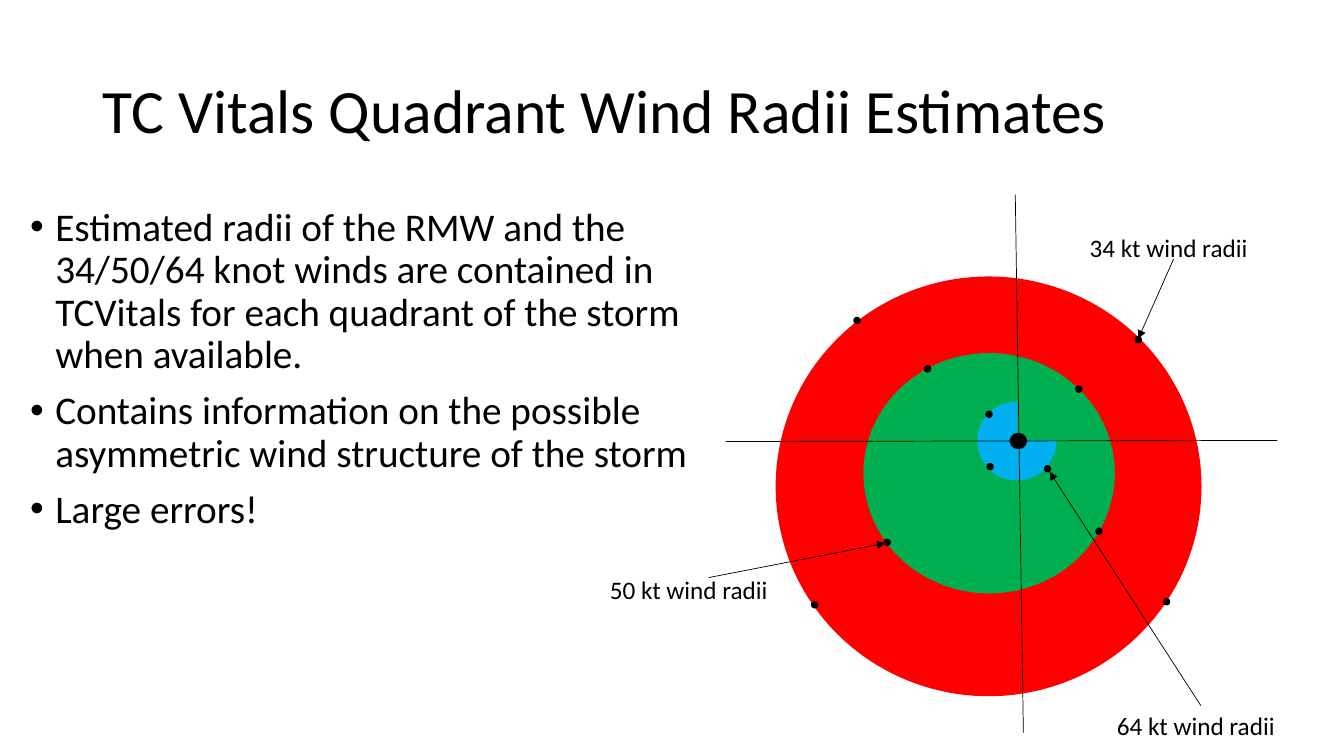
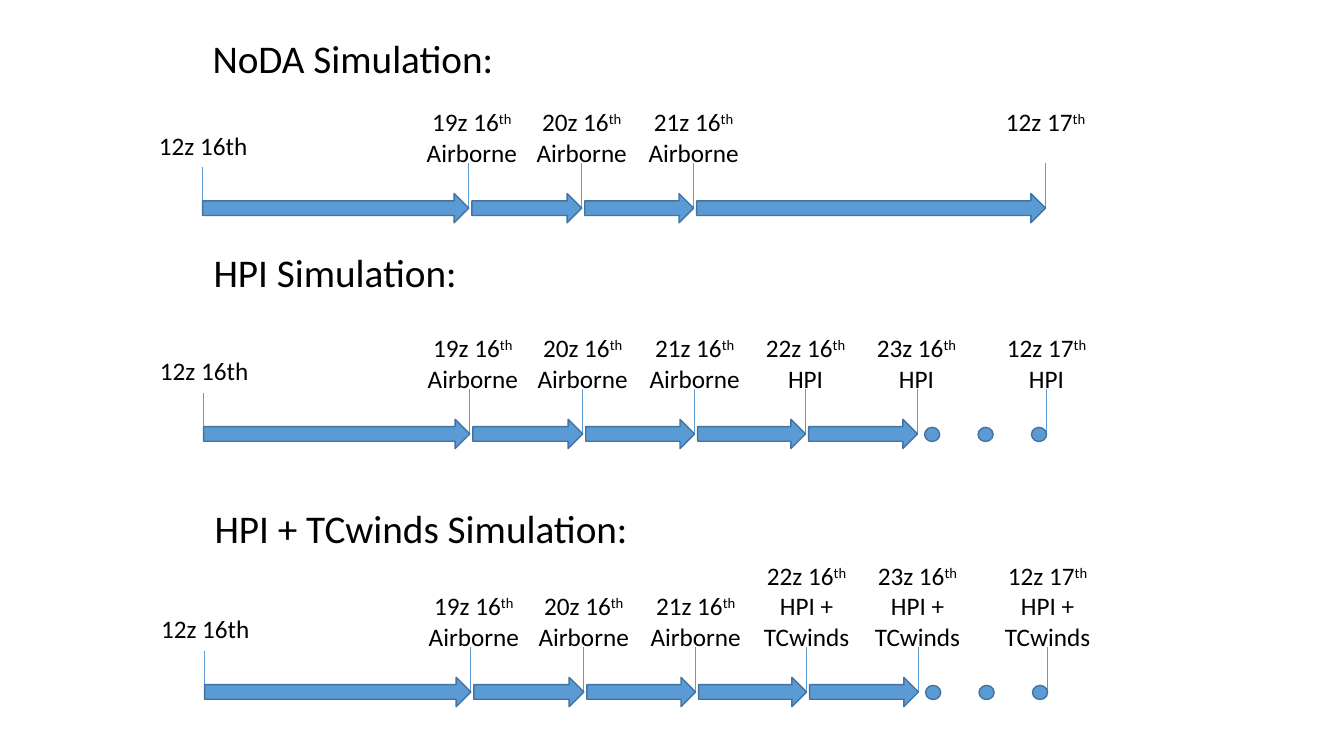
from lxml.etree import SubElement
from pptx import Presentation
from pptx.dml.color import RGBColor
from pptx.enum.shapes import MSO_CONNECTOR as CXN, MSO_SHAPE as SHAPE
from pptx.enum.text import MSO_ANCHOR as ANCHOR, MSO_AUTO_SIZE as FIT, PP_ALIGN as ALIGN
from pptx.oxml.ns import qn
from pptx.util import Pt

PX = 9144
FONT = "Calibri"
COLORS = {
    "text": "000000",
    "kt34": "FF0000",
    "kt50": "00B050",
    "kt64": "00B0F0",
    "step": "5B9BD5",
    "edge": "43739E",
}
TITLE = "TC Vitals Quadrant Wind Radii Estimates"
BULLETS = [
    "Estimated radii of the RMW and the 34/50/64 knot winds are contained in "
    "TCVitals for each quadrant of the storm when available.",
    "Contains information on the possible asymmetric wind structure of the storm",
    "Large errors!",
]
WIND_DOTS = [
    (526, 134), (378, 208), (379, 260), (436, 262), (317, 163), (247, 115),
    (277, 335), (467, 183), (487, 324), (554, 394), (205, 397),
]
AIRBORNE = [
    (264, 267, "19z 16", "Airborne"),
    (376, 376, "20z 16", "Airborne"),
    (487, 487, "21z 16", "Airborne"),
]
LAST_STOP = 836


def px(*values):
    """Turn px lengths into EMU."""
    return [v * PX for v in values]


def rgb(name):
    """Look up a colour by name."""
    return RGBColor.from_string(COLORS[name])


def add_shape(s, kind, box, fill, edge=None):
    """Add a filled preset shape with a thin outline."""
    sp = s.shapes.add_shape(kind, *px(*box))
    sp.shadow.inherit = False
    sp.fill.solid()
    sp.fill.fore_color.rgb = rgb(fill)
    sp.line.color.rgb = rgb(edge or fill)
    sp.line.width = Pt(1)
    return sp


def add_line(s, start, end, color, arrow=False):
    """Add a hairline, optionally with an arrowhead at its end."""
    ln = s.shapes.add_connector(CXN.STRAIGHT, *px(*start, *end))
    ln.line.color.rgb = rgb(color)
    ln.line.width = Pt(0.5)
    if arrow:
        SubElement(ln.line._get_or_add_ln(), qn("a:tailEnd"), type="triangle")
    SubElement(ln._element.spPr, qn("a:effectLst"))
    return ln


def add_text(s, box, paras, size=18, align=ALIGN.LEFT, wrap=True, fit=FIT.SHAPE_TO_FIT_TEXT):
    """Add a text box from paragraphs of (text, is_superscript) runs."""
    sp = s.shapes.add_textbox(*px(*box))
    tf = sp.text_frame
    tf.word_wrap = wrap
    tf.auto_size = fit
    for i, runs in enumerate(paras):
        p = tf.paragraphs[0] if i == 0 else tf.add_paragraph()
        p.alignment = align
        for text, raised in runs:
            r = p.add_run()
            r.text = text
            r.font.size = Pt(size)
            r.font.name = FONT
            r.font.color.rgb = rgb("text")
            if raised:
                r._r.get_or_add_rPr().set("baseline", "30000")
    return sp


def add_title(s, box):
    """Add the large slide title, centred vertically in its box."""
    tf = add_text(s, box, [[(TITLE, False)]], 44, fit=FIT.NONE).text_frame
    tf.vertical_anchor = ANCHOR.MIDDLE
    tf.paragraphs[0].line_spacing = 0.9


def add_bullets(s, box):
    """Add the bulleted body text."""
    sp = add_text(s, box, [[(b, False)] for b in BULLETS], 28, fit=FIT.NONE)
    for p in sp.text_frame.paragraphs:
        p.line_spacing = 0.9
        p.space_before = Pt(10)
        pPr = p._p.get_or_add_pPr()
        pPr.set("marL", str(25 * PX))
        pPr.set("indent", str(-25 * PX))
        SubElement(pPr, qn("a:buFont"), typeface="Arial")
        SubElement(pPr, qn("a:buChar"), char="•")


def wind_diagram(s, x, y):
    """Draw the storm wind rings, axes, labels and quadrant dots."""
    def at(dx, dy):
        return x + dx, y + dy

    def label(dx, dy, text):
        return add_text(s, (*at(dx, dy), 186, 40), [[(text, False)]])

    add_shape(s, SHAPE.OVAL, (*at(170, 75), 421, 415), "kt34")
    add_shape(s, SHAPE.OVAL, (*at(257, 151), 248, 237), "kt50")
    add_shape(s, SHAPE.PIE, (*at(370, 199), 77, 77), "kt64")
    add_shape(s, SHAPE.OVAL, (*at(402, 230), 16, 15), "text")
    add_line(s, at(407, -7), at(415, 527), "text")
    add_line(s, at(120, 238), at(667, 237), "text")
    label_64 = label(498, 500, "64 kt wind radii")
    label(-5, 365, "50 kt wind radii")
    label(471, 26, "34 kt wind radii")
    add_line(s, at(591, 500), at(441, 268), "text", True).begin_connect(label_64, 0)
    add_line(s, at(103, 373), at(278, 339), "text", True)
    add_line(s, at(564, 57), at(529, 136), "text", True)
    for dx, dy in WIND_DOTS:
        add_shape(s, SHAPE.OVAL, (*at(dx, dy), 6, 6), "text")


def timeline(s, x, y, title, title_rise, stops, dotted):
    """Draw one simulation timeline whose first arrow starts at x, y."""
    add_text(s, (x, y - title_rise, 673, 57), [[(title, False)]], 28)
    add_text(s, (x - 54, y - 68, 109, 40), [[("12z 16th", False)]],
             align=ALIGN.CENTER, wrap=False)
    add_line(s, (x, y + 18), (x, y - 26), "step")
    start = 0
    for stop, center, hour, note in stops:
        tick = add_line(s, (x + stop, y + 14), (x + stop, y - 30), "step")
        if not dotted or stop < LAST_STOP:
            arrow = add_shape(s, SHAPE.RIGHT_ARROW, (x + start, y, stop - start, 29),
                              "step", "edge")
            tick.begin_connect(arrow, 3)
        start = stop + 3
        paras = [[(hour, False), ("th", True)]] + ([[(note, False)]] if note else [])
        rise, height = (121, 101) if "+" in note else (91, 71 if note else 40)
        add_text(s, (x + center - 60, y - rise, 120, height), paras, align=ALIGN.CENTER)
    if dotted:
        for i in range(3):
            add_shape(s, SHAPE.OVAL, (x + 715 + 53 * i, y + 8, 15, 14), "step", "edge")


def hourly_stops(note):
    """List the airborne stops followed by the hourly ones with a note."""
    return AIRBORNE + [
        (597, 597, "22z 16", note),
        (708, 707, "23z 16", note),
        (LAST_STOP, LAST_STOP, "12z 17", note),
    ]


def radii_slide(prs):
    """Build the wind radii slide."""
    s = prs.slides.add_slide(prs.slide_layouts[6])
    add_title(s, (92, 40, 1150, 145))
    add_bullets(s, (20, 201, 699, 526))
    wind_diagram(s, 600, 200)


def simulation_slide(prs):
    """Build the slide with the three simulation timelines."""
    s = prs.slides.add_slide(prs.slide_layouts[6])
    free_run = AIRBORNE + [(LAST_STOP, LAST_STOP, "12z 17", "")]
    timeline(s, 201, 192, "NoDA Simulation:", 163, free_run, False)
    timeline(s, 202, 416, "HPI Simulation:", 175, hourly_stops("HPI"), True)
    timeline(s, 203, 672, "HPI + TCwinds Simulation:", 177,
             hourly_stops("HPI + TCwinds"), True)


def main():
    """Build and save the presentation."""
    prs = Presentation()
    prs.slide_width, prs.slide_height = px(1333, 750)
    radii_slide(prs)
    simulation_slide(prs)
    prs.save("out.pptx")


if __name__ == "__main__":
    main()
